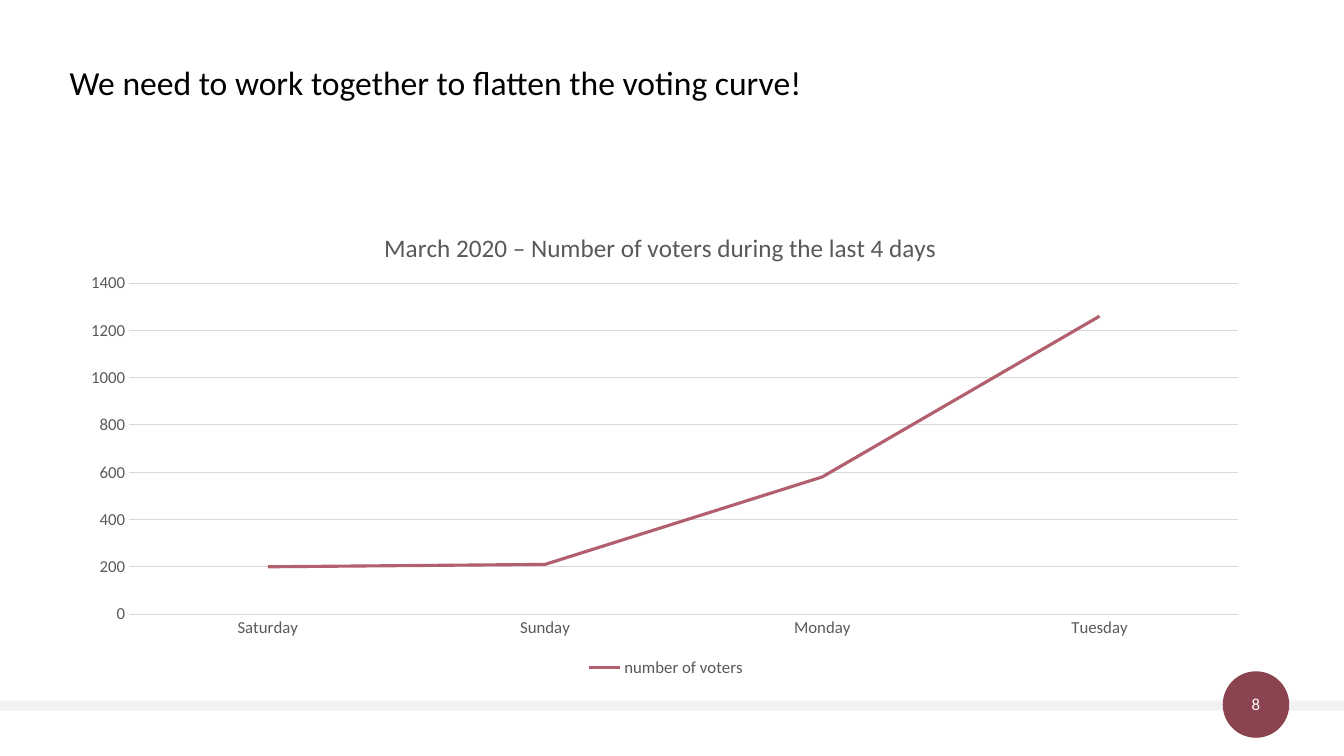
from dataclasses import dataclass

from lxml.etree import SubElement
from pptx import Presentation
from pptx.chart.data import CategoryChartData
from pptx.dml.color import RGBColor
from pptx.enum.chart import XL_CHART_TYPE as ChartType
from pptx.enum.chart import XL_LEGEND_POSITION as LegendPosition
from pptx.enum.chart import XL_MARKER_STYLE as Marker
from pptx.enum.chart import XL_TICK_MARK as TickMark
from pptx.enum.shapes import MSO_SHAPE as Preset
from pptx.enum.text import MSO_ANCHOR as Anchor
from pptx.enum.text import PP_ALIGN as Align
from pptx.oxml.ns import qn
from pptx.util import Pt


@dataclass(frozen=True)
class Theme:
    font: str = "Calibri"
    black: str = "000000"
    white: str = "FFFFFF"
    chart_text: str = "595959"
    grid: str = "D9D9D9"
    band: str = "F2F2F2"
    badge: str = "8A434F"
    voters: str = "B2606E"
    heading_size: float = 24
    chart_title_size: float = 18
    label_size: float = 12
    grid_width: float = 0.75
    voters_width: float = 2.25


THEME = Theme()

VOTERS_BY_DAY = {"Saturday": 200, "Sunday": 210, "Monday": 580, "Tuesday": 1260}


def style_font(font, size, color):
    font.name = THEME.font
    font.size = Pt(size)
    font.bold = False
    font.color.rgb = RGBColor.from_string(color)


def style_line(line, color, width):
    line.color.rgb = RGBColor.from_string(color)
    line.width = Pt(width)


def add_filled_shape(slide, preset, box, color):
    shape = slide.shapes.add_shape(preset, *map(Pt, box))
    shape.shadow.inherit = False
    shape.fill.solid()
    shape.fill.fore_color.rgb = RGBColor.from_string(color)
    shape.line.fill.background()


def add_text(slide, box, text, size, color, align=Align.LEFT,
             anchor=Anchor.TOP, insets=(0, 0, 0, 0), line_spacing=1.0):
    """Add a one-paragraph text box; insets run left, top, right, bottom."""
    frame = slide.shapes.add_textbox(*map(Pt, box)).text_frame
    frame.word_wrap = True
    frame.vertical_anchor = anchor
    (frame.margin_left, frame.margin_top,
     frame.margin_right, frame.margin_bottom) = map(Pt, insets)
    paragraph = frame.paragraphs[0]
    paragraph.alignment = align
    paragraph.line_spacing = line_spacing
    run = paragraph.add_run()
    run.text = text
    style_font(run.font, size, color)


def place_in_chart(element, after, **fractions):
    """Fix a chart part at fractions of the chart area."""
    for old_layout in element.findall(qn("c:layout")):
        element.remove(old_layout)
    layout = SubElement(element, qn("c:layout"))
    manual = SubElement(layout, qn("c:manualLayout"))
    if "w" in fractions:
        SubElement(manual, qn("c:layoutTarget")).set("val", "inner")
    for mode in ("xMode", "yMode"):
        SubElement(manual, qn(f"c:{mode}")).set("val", "edge")
    for key, fraction in fractions.items():
        SubElement(manual, qn(f"c:{key}")).set("val", str(fraction))
    if after is None:
        element.insert(0, layout)
    else:
        after.addnext(layout)


def style_axis(axis):
    axis.major_tick_mark = TickMark.NONE
    axis.minor_tick_mark = TickMark.NONE
    style_font(axis.tick_labels.font, THEME.label_size, THEME.chart_text)


def add_chart_title(chart, text):
    chart.has_title = True
    title = chart.chart_title
    run = title.text_frame.paragraphs[0].add_run()
    run.text = text
    style_font(run.font, THEME.chart_title_size, THEME.chart_text)
    title_xml = title._element
    place_in_chart(title_xml, title_xml.find(qn("c:tx")), x=0.26, y=0.05)


def add_voter_chart(slide, box):
    voter_data = CategoryChartData()
    voter_data.categories = list(VOTERS_BY_DAY)
    voter_data.add_series("number of voters", list(VOTERS_BY_DAY.values()))
    chart = slide.shapes.add_chart(
        ChartType.LINE, *map(Pt, box), voter_data).chart
    style_font(chart.font, THEME.label_size, THEME.chart_text)
    add_chart_title(chart, "March 2020 – Number of voters during the last 4 days")
    plot_area = chart._chartSpace.chart.plotArea
    place_in_chart(plot_area, None, x=0.05, y=0.17, w=0.93, h=0.69)

    chart.has_legend = True
    chart.legend.position = LegendPosition.BOTTOM
    chart.legend.include_in_layout = False
    style_font(chart.legend.font, THEME.label_size, THEME.chart_text)

    days, counts = chart.category_axis, chart.value_axis
    style_axis(days)
    style_line(days.format.line, THEME.grid, THEME.grid_width)
    style_axis(counts)
    counts.minimum_scale, counts.maximum_scale, counts.major_unit = 0, 1400, 200
    counts.format.line.fill.background()
    style_line(counts.major_gridlines.format.line, THEME.grid, THEME.grid_width)

    chart.plots[0].vary_by_categories = False
    voters = chart.plots[0].series[0]
    voters.smooth = False
    voters.marker.style = Marker.NONE
    style_line(voters.format.line, THEME.voters, THEME.voters_width)


def main():
    deck = Presentation()
    deck.slide_width, deck.slide_height = Pt(960), Pt(540)
    slide = deck.slides.add_slide(deck.slide_layouts[6])

    add_filled_shape(slide, Preset.RECTANGLE, (0, 500.4, 960, 7.2), THEME.band)
    add_filled_shape(slide, Preset.OVAL, (873.4, 479.5, 47.5, 47.5), THEME.badge)
    add_text(slide, (873.4, 487.5, 47.5, 31), "8", THEME.label_size,
             THEME.white, align=Align.CENTER, anchor=Anchor.MIDDLE)
    add_text(slide, (49.7, 43.9, 851.8, 65.5),
             "We need to work together to flatten the voting curve!",
             THEME.heading_size, THEME.black,
             insets=(0, 3.6, 7.2, 3.6), line_spacing=0.9)
    add_voter_chart(slide, (49.7, 144, 851.8, 342.7))

    deck.save("out.pptx")


if __name__ == "__main__":
    main()
